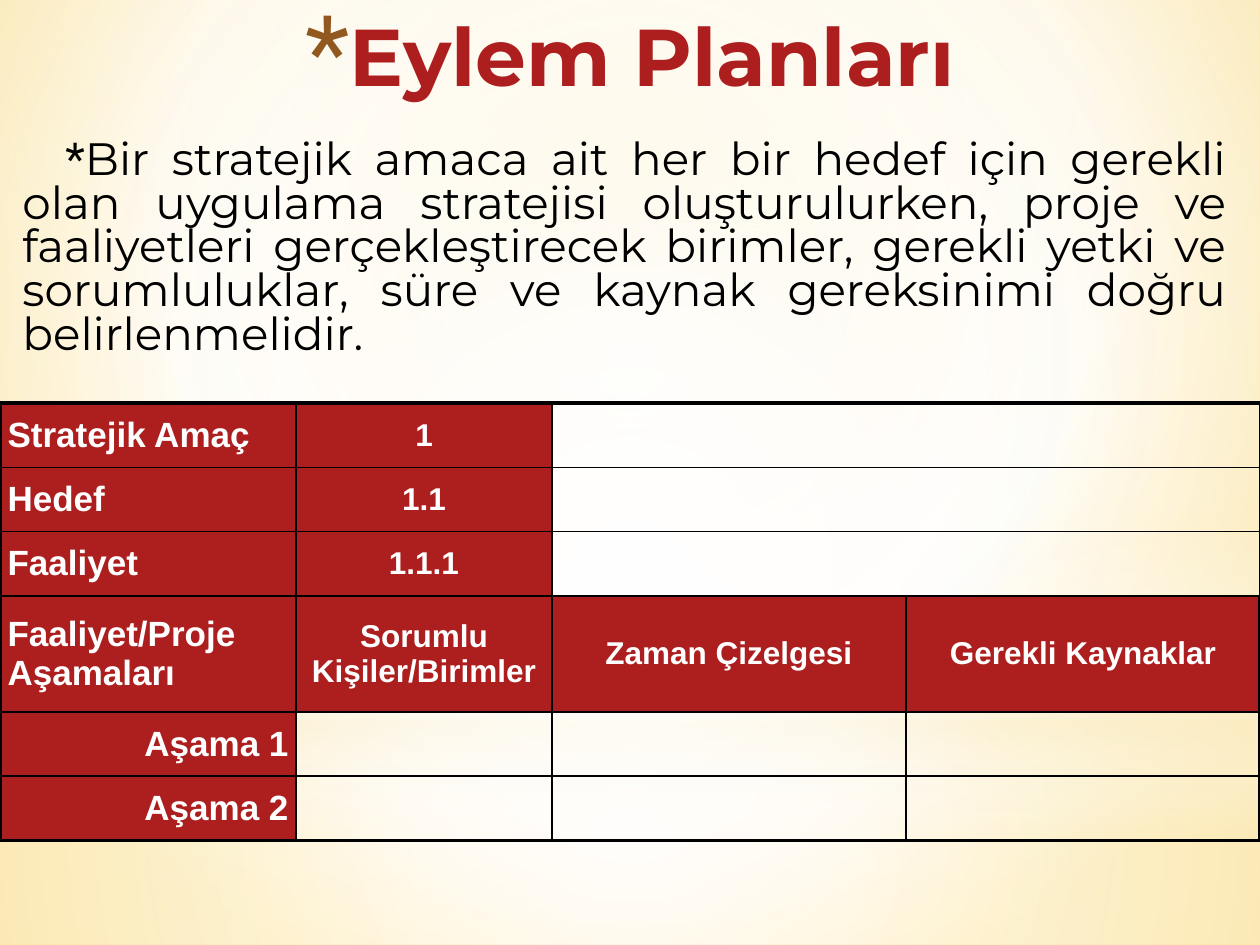
import pptx
import pptx.dml.color
import pptx.enum.shapes
import pptx.enum.text
import pptx.oxml
import pptx.oxml.ns
import pptx.util
from lxml import etree

Inches = pptx.util.Inches
Pt = pptx.util.Pt
RGBColor = pptx.dml.color.RGBColor
Align = pptx.enum.text.PP_ALIGN
Anchor = pptx.enum.text.MSO_ANCHOR
Shape = pptx.enum.shapes.MSO_SHAPE
qn = pptx.oxml.ns.qn

RED = RGBColor(0xAD, 0x1F, 0x1F)
BROWN = RGBColor(0x91, 0x58, 0x1F)
BLACK = RGBColor(0, 0, 0)
WHITE = RGBColor(0xFF, 0xFF, 0xFF)
CREAM = RGBColor(0xFB, 0xEE, 0xC9)
PALE_GOLD = RGBColor(0xFE, 0xEA, 0xB3)
GOLD = RGBColor(0xFF, 0xD9, 0x6C)

CENTRED = (50, 50, 50, 50)


def add_node(parent, tag, **attributes):
    node = etree.SubElement(parent, qn(tag))
    for name, value in attributes.items():
        node.set(name, str(value))
    return node


def write_text(paragraph, text, font="Arial", size=18, color=WHITE, bold=False, align=None):
    run = paragraph.add_run()
    run.text = text
    run.font.name = font
    run.font.size = Pt(size)
    run.font.color.rgb = color
    run.font.bold = bold
    if align is not None:
        paragraph.alignment = align


def set_gradient(owner, stops, focus=None):
    """Stops are (position, colour, opacity) in percent; without focus it runs downwards."""
    gradient = owner.find(".//" + qn("a:gradFill"))
    for child in list(gradient):
        gradient.remove(child)
    stop_list = add_node(gradient, "a:gsLst")
    for position, color, opacity in stops:
        stop = add_node(stop_list, "a:gs", pos=position * 1000)
        tint = add_node(stop, "a:srgbClr", val=color)
        if opacity < 100:
            add_node(tint, "a:alpha", val=opacity * 1000)
    if focus:
        circle = add_node(gradient, "a:path", path="circle")
        edges = {side: edge * 1000 for side, edge in zip("ltrb", focus)}
        add_node(circle, "a:fillToRect", **edges)
    else:
        add_node(gradient, "a:lin", ang=90 * 60000, scaled=0)


class PlanSlide:
    thin, thick = Pt(1), Pt(2.25)

    def __init__(self, deck):
        self.slide = deck.slides.add_slide(deck.slide_layouts[5])

    def background(self, stops, focus):
        self.slide.background.fill.gradient()
        set_gradient(self.slide._element, stops, focus)

    def glow(self, kind, top, height, stops, focus=None):
        glow = self.slide.shapes.add_shape(kind, 0, Inches(top), Inches(10), Inches(height))
        glow.shadow.inherit = False
        glow.line.fill.background()
        glow.fill.gradient()
        set_gradient(glow._element, stops, focus)

    def title(self, text):
        heading = self.slide.shapes.title
        self.slide.shapes._spTree.append(heading._element)  # in front of the glows
        heading.left, heading.top = 0, 0
        heading.width, heading.height = Inches(10), Inches(0.83)
        frame = heading.text_frame
        frame.auto_size = pptx.enum.text.MSO_AUTO_SIZE.NONE
        frame.vertical_anchor = Anchor.TOP
        paragraph = frame.paragraphs[0]
        write_text(paragraph, text, font="Montserrat", size=46, color=RED, bold=True,
                   align=Align.CENTER)
        properties = paragraph._p.get_or_add_pPr()
        properties.set("marL", str(Inches(0.35)))
        properties.set("indent", str(Inches(-0.35)))
        add_node(add_node(properties, "a:buClr"), "a:srgbClr", val=BROWN)
        add_node(properties, "a:buSzPct", val=128000)
        add_node(properties, "a:buFont", typeface="Roboto")
        add_node(properties, "a:buChar", char="*")

    def body(self, mark, text):
        box = self.slide.shapes.add_textbox(Inches(-0.17), Inches(1.07), Inches(10), Inches(2.01))
        box.text_frame.word_wrap = True
        paragraph = box.text_frame.paragraphs[0]
        paragraph.line_spacing = 0.8
        paragraph.space_before, paragraph.space_after = Pt(2), Pt(3)
        write_text(paragraph, mark, font="Roboto", size=25.9, color=BLACK, align=Align.JUSTIFY)
        write_text(paragraph, text, font="Montserrat", size=25.9, color=BLACK)
        properties = paragraph._p.get_or_add_pPr()
        properties.set("marL", str(Inches(0.25)))
        properties.set("indent", str(Inches(0.34)))

    def cell_borders(self, cell, outer):
        """Outer holds, for each side, whether it lies on the edge of the table."""
        properties = cell._tc.get_or_add_tcPr()
        for side in "LRTB":
            width = self.thick if outer[side] else self.thin
            line = add_node(properties, "a:ln" + side, w=int(width))
            add_node(add_node(line, "a:solidFill"), "a:srgbClr", val=BLACK)

    def table(self, rows, widths, heights, merged_rows):
        last_row, last_column = len(heights) - 1, len(widths) - 1
        table = self.slide.shapes.add_table(
            len(heights), len(widths), 0, Inches(3.2),
            Inches(sum(widths)), Inches(sum(heights))).table
        table.first_row = table.horz_banding = False
        for column, width in zip(table.columns, widths):
            column.width = Inches(width)
        for row, height in zip(table.rows, heights):
            row.height = Inches(height)
        for r, texts in enumerate(rows):
            for c in range(len(widths)):
                cell = table.cell(r, c)
                self.cell_borders(cell, {"L": c == 0, "R": c == last_column,
                                         "T": r == 0, "B": r == last_row})
                cell.margin_left = cell.margin_right = Inches(0.06)
                cell.margin_top = cell.margin_bottom = Inches(0.04)
                cell.vertical_anchor = Anchor.MIDDLE
                if c >= len(texts):
                    cell.fill.background()
                    continue
                cell.fill.solid()
                cell.fill.fore_color.rgb = RED
                if c:
                    align = Align.CENTER
                else:
                    align = Align.RIGHT if len(texts) == 1 else Align.LEFT
                write_text(cell.text_frame.paragraphs[0], texts[c], size=18 if c else 20,
                           bold=True, align=align)
        for r in merged_rows:
            table.cell(r, 2).merge(table.cell(r, last_column))


def main():
    deck = pptx.Presentation()
    deck.slide_width, deck.slide_height = Inches(10), Inches(7.5)
    plan = PlanSlide(deck)

    # Backdrop
    plan.background([(0, PALE_GOLD, 100), (60, WHITE, 100), (100, GOLD, 100)], (20, 10, 20, 60))
    plan.glow(Shape.RECTANGLE, 5.58, 1.92,
              [(0, WHITE, 91), (37, WHITE, 76), (100, CREAM, 79)], CENTRED)
    plan.glow(Shape.RECTANGLE, 0, 5.58,
              [(0, WHITE, 89), (48, WHITE, 62), (100, CREAM, 79)], CENTRED)
    plan.glow(Shape.RECTANGLE, 4.12, 2.5,
              [(0, WHITE, 0), (29, WHITE, 30), (45, CREAM, 40),
               (55, WHITE, 26), (65, CREAM, 60), (100, WHITE, 0)])
    plan.glow(Shape.OVAL, 1.75, 5.58, [(0, WHITE, 100), (56, WHITE, 0)], CENTRED)

    # Heading and explanation
    plan.title("Eylem Planları")
    plan.body("*", "Bir stratejik amaca ait her bir hedef için gerekli olan uygulama stratejisi "
              "oluşturulurken, proje ve faaliyetleri gerçekleştirecek birimler, gerekli yetki ve "
              "sorumluluklar, süre ve kaynak gereksinimi doğru belirlenmelidir.")

    # Action plan form: cells without text stay open
    plan.table(
        [["Stratejik Amaç", "1"],
         ["Hedef", "1.1"],
         ["Faaliyet", "1.1.1"],
         ["Faaliyet/Proje Aşamaları", "Sorumlu Kişiler/Birimler",
          "Zaman Çizelgesi", "Gerekli Kaynaklar"],
         ["Aşama 1"],
         ["Aşama 2"]],
        widths=[2.35, 2.03, 2.81, 2.81],
        heights=[0.51, 0.51, 0.51, 0.92, 0.51, 0.51],
        merged_rows=range(3))

    deck.save("out.pptx")


if __name__ == "__main__":
    main()
